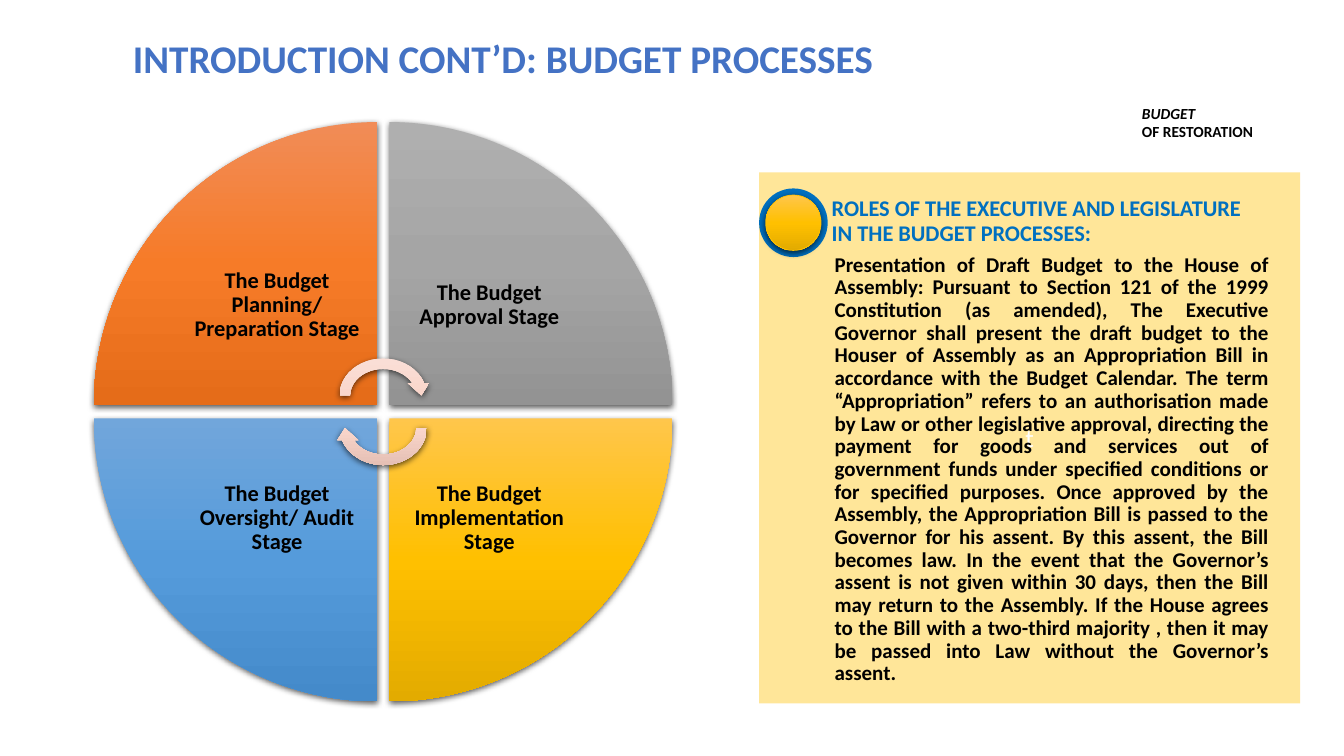
from lxml import etree
from pptx import Presentation
from pptx.dml.color import RGBColor
from pptx.enum import shapes, text
from pptx.oxml import parse_xml
from pptx.oxml.ns import nsdecls
from pptx.util import Pt

SH, AL, AN = shapes.MSO_SHAPE, text.PP_ALIGN, text.MSO_ANCHOR
YELLOW = ("FFC64B", "FFC000", "E3AB00")
PINK = ("FAE0D8", "FAD6CB", "E2BCB1")
STAGES = [  # column, row, rotation, gradient, label
    (0, 0, 0, ("F18C57", "F67B28", "E56C19"), "The Budget Planning/ Preparation Stage"),
    (1, 0, 90, ("AFAFAF", "A5A5A5", "939393"), "The Budget Approval Stage"),
    (1, 1, 180, YELLOW, "The Budget Implementation Stage"),
    (0, 1, 270, ("71A6DB", "559BDB", "448ACA"), "The Budget Oversight/ Audit Stage"),
]
HEADING = "ROLES OF THE EXECUTIVE AND LEGISLATURE IN THE BUDGET PROCESSES:"
SENTENCES = [
    "Presentation of Draft Budget to the House of Assembly: Pursuant to Section 121 of the "
    "1999 Constitution (as amended), The Executive Governor shall present the draft budget to "
    "the Houser of Assembly as an Appropriation Bill in accordance with the Budget Calendar.",
    "The term “Appropriation” refers to an authorisation made by Law or other legislative "
    "approval, directing the payment for goods and services out of government funds under "
    "specified conditions or for specified purposes.",
    "Once approved by the Assembly, the Appropriation Bill is passed to the Governor for his "
    "assent.",
    "By this assent, the Bill becomes law.",
    "In the event that the Governor’s assent is not given within 30 days, then the Bill may "
    "return to the Assembly.",
    "If the House agrees to the Bill with a two-third majority , then it may be passed into "
    "Law without the Governor’s assent.",
]


def rgb(value):
    return RGBColor.from_string(value)


def write(sp, lines, size, color="000000", align=AL.LEFT, anchor=AN.TOP,
          inset=(7.2, 3.6), spacing=1.0, **font):
    tf = sp.text_frame
    x, y = map(Pt, inset)
    frame = dict(word_wrap=True, auto_size=text.MSO_AUTO_SIZE.NONE, vertical_anchor=anchor,
                 margin_left=x, margin_right=x, margin_top=y, margin_bottom=y)
    for name, value in frame.items():
        setattr(tf, name, value)
    tf.text = lines
    style = {"name": "Calibri", "size": Pt(size), "bold": True, **font}
    for p in tf.paragraphs:
        p.alignment, p.line_spacing = align, spacing
        for r in p.runs:
            r.font.color.rgb = rgb(color)
            for name, value in style.items():
                setattr(r.font, name, value)
    return tf


def add_text(s, box, lines, size, **style):
    return write(s.shapes.add_textbox(*map(Pt, box)), lines, size, **style)


def add_flat(s, kind, box, color):
    sp = s.shapes.add_shape(kind, *map(Pt, box))
    sp.shadow.inherit = False
    sp.fill.solid()
    sp.fill.fore_color.rgb = rgb(color)
    sp.line.fill.background()
    return sp


def add_glossy(s, kind, box, colors, rotation=0):
    """Add a shape with a vertical three-stop gradient and a soft shadow below."""
    sp = add_flat(s, kind, box, colors[1])
    sp.rotation = rotation
    stops = "".join(f'<a:gs pos="{i * 50000}"><a:srgbClr val="{c}"/></a:gs>'
                    for i, c in enumerate(colors))
    props = sp.element.spPr
    solid = props.find("{*}solidFill")
    props.replace(solid, parse_xml(
        f'<a:gradFill {nsdecls("a")} rotWithShape="0"><a:gsLst>{stops}</a:gsLst>'
        '<a:lin ang="5400000" scaled="0"/></a:gradFill>'))
    props.find("{*}effectLst").append(etree.fromstring(
        f'<a:outerShdw {nsdecls("a")} blurRad="57150" dist="19050" dir="5400000" '
        'algn="ctr" rotWithShape="0"><a:srgbClr val="000000"><a:alpha val="63000"/>'
        '</a:srgbClr></a:outerShdw>'))
    return sp


def add_title(s, box):
    sp = s.shapes.title
    sp.left, sp.top, sp.width, sp.height = map(Pt, box)
    write(sp, "INTRODUCTION CONT’D: BUDGET PROCESSES", 28, "4472C4", AL.CENTER)


def add_slogan(s, box):
    tf = add_text(s, box, "BUDGET\nOF RESTORATION", 11)
    tf.paragraphs[0].runs[0].font.italic = True


def add_wheel(s, box):
    """Draw four wedges, each labelled at its inner corner, and two arrows in the middle."""
    x, y, w, h = box
    wedge, label = 202.2, 142.6
    shift = wedge - label
    for col, row, rotation, colors, stage in STAGES:
        left, top = x + col * (w - wedge), y + row * (h - wedge)
        add_glossy(s, SH.PIE_WEDGE, (left, top, wedge, wedge), colors, rotation)
        inner = (left + (1 - col) * shift, top + (1 - row) * shift, label, label)
        add_text(s, inner, stage, 16, align=AL.CENTER, anchor=AN.MIDDLE,
                 inset=(9, 9), spacing=0.9)
    aw, ah = 69.8, 60.5
    for rotation, offset in ((0, -11.6), (180, 11.6)):
        arrow = (x + (w - aw) / 2, y + (h - ah) / 2 + offset, aw, ah)
        add_glossy(s, SH.CIRCULAR_ARROW, arrow, PINK, rotation)


def add_roles_panel(s, box):
    x, y, w, h = box
    panel = add_flat(s, SH.RECTANGLE, box, "FFE699")
    write(panel, "t", 18, "FFFFFF", AL.CENTER, AN.MIDDLE, bold=False)
    add_flat(s, SH.OVAL, (x, y + 11.5, 49, 49), "0070C0")
    disc = add_glossy(s, SH.CHORD, (x + 4.7, y + 16.2, 39.6, 39.6), YELLOW)
    disc.adjustments[0] = disc.adjustments[1] = 162
    disc.line.color.rgb = rgb("FFC000")
    disc.line.width = Pt(0.5)
    block = dict(inset=(2.9, 2.9), spacing=0.9)
    add_text(s, (x + 51.1, y + 55.5, 316, 340.5), " ".join(SENTENCES), 15,
             align=AL.JUSTIFY, **block)
    add_text(s, (x + 49, y - 25.2, 304.5, 80.7), HEADING, 16, color="0070C0",
             anchor=AN.BOTTOM, **block)


def main():
    prs = Presentation()
    prs.slide_width, prs.slide_height = Pt(960), Pt(540)
    s = prs.slides.add_slide(prs.slide_layouts[5])
    add_title(s, (62.6, 20.9, 593.3, 41))
    add_wheel(s, (67, 87.2, 413.4, 413.8))
    add_slogan(s, (808.6, 70.6, 105.8, 34.6))
    add_roles_panel(s, (542.2, 123.1, 386.6, 379.4))
    prs.save("out.pptx")


if __name__ == "__main__":
    main()
